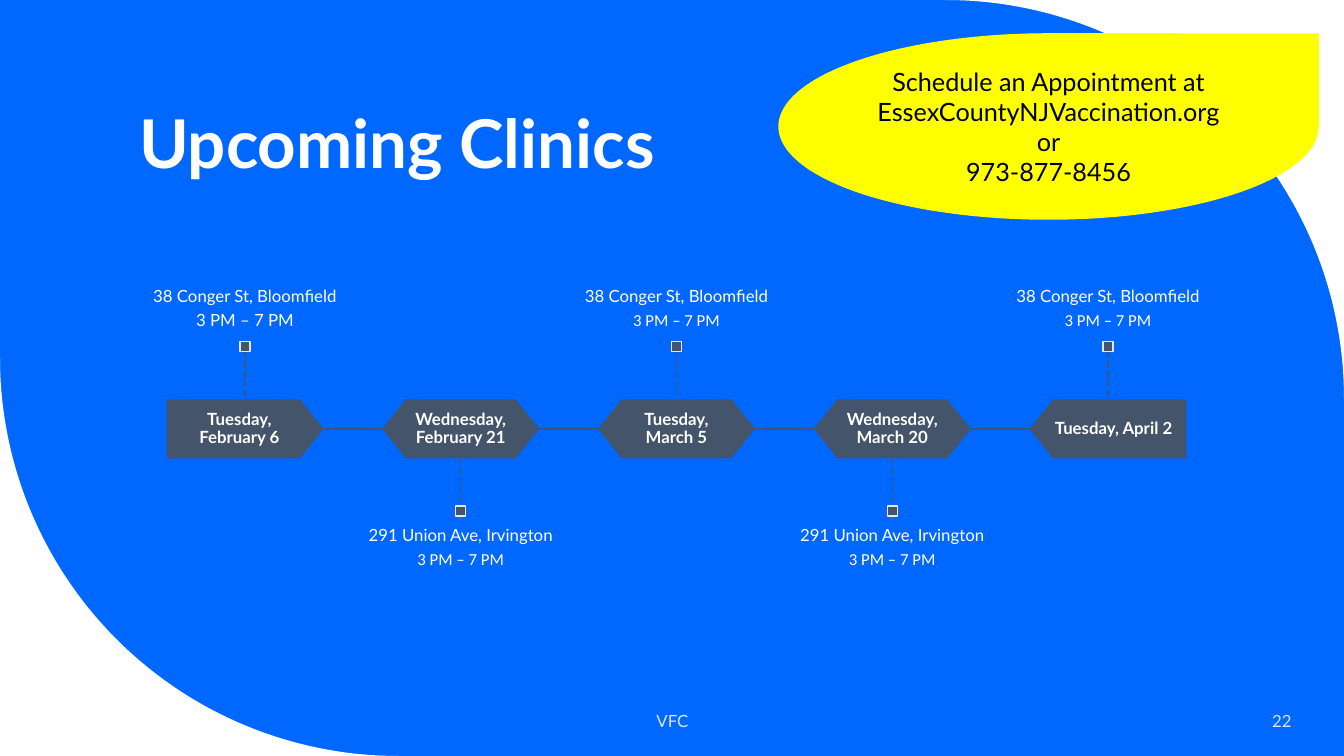
import math
from lxml import etree
from pptx import Presentation
from pptx.dml.color import RGBColor
from pptx.enum import dml, shapes, text
from pptx.oxml.ns import qn
from pptx.util import Inches, Pt

TITLE = "Upcoming Clinics"
BOOKING = ["Schedule an Appointment at EssexCountyNJVaccination.org", "or", "973-877-8456"]
BLOOMFIELD = "38 Conger St, Bloomfield"
IRVINGTON = "291 Union Ave, Irvington"
HOURS = "3 PM – 7 PM"
CLINICS = [
    ("Tuesday, February 6", BLOOMFIELD, "Lato"),
    ("Wednesday, February 21", IRVINGTON, "Calibri"),
    ("Tuesday, March 5", BLOOMFIELD, "Calibri"),
    ("Wednesday, March 20", IRVINGTON, "Calibri"),
    ("Tuesday, April 2", BLOOMFIELD, "Calibri"),
]
FOOTERS = [
    ("VFC", (4.42, 6.95, 4.5, 0.4), text.PP_ALIGN.CENTER),
    ("22", (11.1, 6.95, 1.81, 0.4), text.PP_ALIGN.RIGHT),
]
COLORS = {
    "blue": "0068FF", "white": "FFFFFF", "slate": "44546A", "edge": "E7E6E6",
    "yellow": "FFFF00", "black": "000000", "footer": "DAE5EF",
}
WIDTH, HEIGHT = 13.33, 7.5
CORNER_RADIUS, CORNER_STEPS = 3.95, 60
FIRST_LEFT, PITCH = 1.66, 2.14
STEP_W, STEP_H, STEP_TOP = 1.54, 0.57, 3.97
AXIS = STEP_TOP + STEP_H / 2
STEM, MARKER = 0.48, 0.1
LABEL_H, LABEL_ABOVE, LABEL_BELOW = 1.53, 1.87, 5.11

prs = Presentation()
prs.slide_width, prs.slide_height = Inches(WIDTH), Inches(HEIGHT)
slide = prs.slides.add_slide(prs.slide_layouts[5])


def rgb(name):
    return RGBColor.from_string(COLORS[name])


def box(*lengths):
    return [Inches(length) for length in lengths]


def paint(shape, fill, line=None):
    shape.shadow.inherit = False
    shape.fill.solid()
    shape.fill.fore_color.rgb = rgb(fill)
    if line:
        shape.line.color.rgb = rgb(line)
        shape.line.width = Pt(1)
    else:
        shape.line.fill.background()


def write(shape, lines, size, color, align=text.PP_ALIGN.CENTER, bold=False,
          anchor=text.MSO_ANCHOR.MIDDLE, insets=(0.1, 0.05), spacing=None, after=0):
    frame = shape.text_frame
    frame.text = "\n".join(lines)
    frame.word_wrap = True
    frame.auto_size = text.MSO_AUTO_SIZE.NONE
    frame.vertical_anchor = anchor
    frame.margin_left = frame.margin_right = Inches(insets[0])
    frame.margin_top = frame.margin_bottom = Inches(insets[1])
    for paragraph in frame.paragraphs:
        paragraph.alignment = align
        paragraph.line_spacing = spacing
        paragraph.space_after = Pt(after)
        for run in paragraph.runs:
            run.font.name, run.font.size, run.font.bold = "Lato", Pt(size), bold
            run.font.color.rgb = rgb(color)


def connect(start, end, dashed=False):
    link = slide.shapes.add_connector(shapes.MSO_CONNECTOR.STRAIGHT, *box(*start, *end))
    link.line.color.rgb = rgb("slate")
    link.line.width = Pt(1)
    if dashed:
        link.line.dash_style = dml.MSO_LINE.DASH
    etree.SubElement(link._element.spPr, qn("a:effectLst"))


def add_corner(corner, center, start_angle):
    arc = []
    for step in range(CORNER_STEPS + 1):
        angle = start_angle + math.pi / 2 * step / CORNER_STEPS
        arc.append((Inches(center[0] + CORNER_RADIUS * math.cos(angle)),
                    Inches(center[1] + CORNER_RADIUS * math.sin(angle))))
    builder = slide.shapes.build_freeform(*box(*corner))
    builder.add_line_segments(arc, close=True)
    paint(builder.convert_to_shape(), "white")


def add_clinic(index, date, place, hours_font):
    last = len(CLINICS) - 1
    left = FIRST_LEFT + index * PITCH
    middle = left + STEP_W / 2
    at_end = index in (0, last)
    above = index % 2 == 0

    kind = shapes.MSO_SHAPE.PENTAGON if at_end else shapes.MSO_SHAPE.HEXAGON
    step = slide.shapes.add_shape(kind, *box(left, STEP_TOP, STEP_W, STEP_H))
    step.adjustments[0] = 0.4
    step.rotation = 180 if index == last else 0
    paint(step, "slate", "slate")

    date_w = 1.43 if at_end else 1.13
    date_left = {0: left, last: left + STEP_W - date_w}.get(index, middle - date_w / 2)
    day = slide.shapes.add_textbox(*box(date_left, STEP_TOP, date_w, STEP_H))
    write(day, [date], 12, "white", bold=True, insets=(0.1, 0.1), spacing=0.9, after=4.2)

    label_top = LABEL_ABOVE if above else LABEL_BELOW
    label = slide.shapes.add_textbox(*box(middle - PITCH / 2, label_top, PITCH, LABEL_H))
    write(label, [place, HOURS], 12, "white", insets=(0, 0.12), spacing=0.9, after=4.2,
          anchor=text.MSO_ANCHOR.BOTTOM if above else text.MSO_ANCHOR.TOP)
    label.text_frame.paragraphs[1].runs[0].font.name = hours_font

    if index < last:
        connect((left + STEP_W, AXIS), (left + PITCH, AXIS))
    stem_top = STEP_TOP - STEM if above else STEP_TOP + STEP_H
    connect((middle, stem_top), (middle, stem_top + STEM), dashed=True)
    marker_top = stem_top - MARKER if above else stem_top + STEM
    marker = slide.shapes.add_shape(
        shapes.MSO_SHAPE.RECTANGLE, *box(middle - MARKER / 2, marker_top, MARKER, MARKER))
    paint(marker, "slate", "edge")


slide.background.fill.solid()
slide.background.fill.fore_color.rgb = rgb("blue")
add_corner((WIDTH, 0), (WIDTH - CORNER_RADIUS, CORNER_RADIUS), -math.pi / 2)
add_corner((0, HEIGHT), (CORNER_RADIUS, HEIGHT - CORNER_RADIUS), math.pi / 2)

heading = slide.shapes.title
heading.left, heading.top, heading.width, heading.height = box(1.28, 0.42, 10.69, 1.45)
write(heading, [TITLE], 48, "white", align=text.PP_ALIGN.LEFT, bold=True,
      anchor=text.MSO_ANCHOR.BOTTOM, spacing=0.9)

for index, clinic in enumerate(CLINICS):
    add_clinic(index, *clinic)

for words, place, align in FOOTERS:
    write(slide.shapes.add_textbox(*box(*place)), [words], 12, "footer", align=align)

booking = slide.shapes.add_shape(shapes.MSO_SHAPE.TEAR, *box(7.72, 0.33, 5.36, 1.85))
paint(booking, "yellow")
write(booking, BOOKING, 18, "black")

prs.save("out.pptx")
